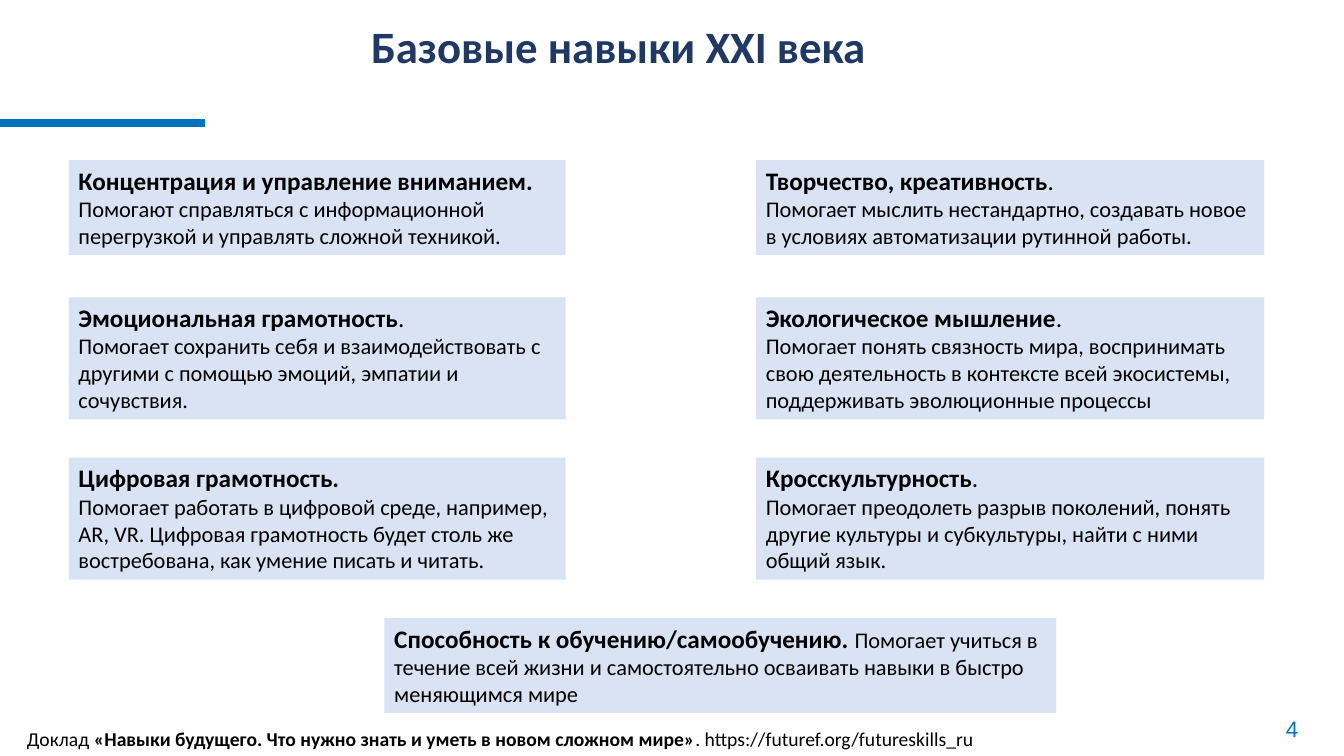
from dataclasses import dataclass

import pptx
import pptx.dml.color
import pptx.enum.shapes
import pptx.enum.text
import pptx.util
from lxml import etree

COLORS = {
    "accent": "0072BC",
    "title": "203864",
    "card": "DAE3F3",
    "text": "000000",
}
FONT = "Calibri"
Align = pptx.enum.text.PP_ALIGN
Anchor = pptx.enum.text.MSO_ANCHOR
AutoSize = pptx.enum.text.MSO_AUTO_SIZE
Pt = pptx.util.Pt


@dataclass(frozen=True)
class Box:
    left: float
    top: float
    width: float
    height: float

    def lengths(self) -> tuple:
        return Pt(self.left), Pt(self.top), Pt(self.width), Pt(self.height)


@dataclass(frozen=True)
class Run:
    text: str
    size: float
    bold: bool = False


@dataclass(frozen=True)
class Skill:
    heading: str
    benefit: str
    stop: str = ""


def rgb(name: str) -> pptx.dml.color.RGBColor:
    return pptx.dml.color.RGBColor.from_string(COLORS[name])


def write(paragraph, runs: list[Run], color: str = "text", font: str = FONT,
          align: Align = Align.LEFT) -> None:
    paragraph.alignment = align
    paragraph.font.name = font
    paragraph.font.color.rgb = rgb(color)
    if len({run.size for run in runs}) == 1:
        paragraph.font.size = Pt(runs[0].size)
    if len({run.bold for run in runs}) == 1:
        paragraph.font.bold = runs[0].bold
    for run in runs:
        part = paragraph.add_run()
        part.text = run.text
        if paragraph.font.size is None:
            part.font.size = Pt(run.size)
        if paragraph.font.bold is None:
            part.font.bold = run.bold


def add_card(slide, box: Box, paragraphs: list[list[Run]]) -> None:
    card = slide.shapes.add_shape(
        pptx.enum.shapes.MSO_SHAPE.RECTANGLE, *box.lengths())
    card.shadow.inherit = False
    card.fill.solid()
    card.fill.fore_color.rgb = rgb("card")
    card.line.fill.background()
    frame = card.text_frame
    frame.word_wrap = True
    frame.auto_size = AutoSize.SHAPE_TO_FIT_TEXT
    frame.vertical_anchor = Anchor.TOP
    for index, runs in enumerate(paragraphs):
        write(frame.add_paragraph() if index else frame.paragraphs[0], runs)


def add_title(slide) -> None:
    title = slide.shapes.title
    title.left, title.top, title.width, title.height = Box(257.8, 10, 371.5, 46).lengths()
    frame = title.text_frame
    frame.word_wrap = False
    frame.auto_size = AutoSize.SHAPE_TO_FIT_TEXT
    frame.vertical_anchor = Anchor.TOP
    write(frame.paragraphs[0], [Run("Базовые навыки XXI века", 32, True)], "title")


def add_accent_line(slide) -> None:
    accent = slide.shapes.add_connector(
        pptx.enum.shapes.MSO_CONNECTOR.STRAIGHT, Pt(0), Pt(87.8), Pt(146.2), Pt(87.8))
    accent.line.color.rgb = rgb("accent")
    accent.line.width = Pt(6)
    properties = accent.element.spPr
    etree.SubElement(properties, pptx.oxml.ns.qn("a:effectLst"))


def add_page_number(slide) -> None:
    frame = slide.shapes.add_textbox(*Box(894.2, 505.4, 57.6, 29.5).lengths()).text_frame
    frame.word_wrap = True
    frame.vertical_anchor = Anchor.MIDDLE
    write(frame.paragraphs[0], [Run("4", 16)], "accent", "Arial", Align.CENTER)


def add_reference(slide) -> None:
    frame = slide.shapes.add_textbox(*Box(12.2, 515.5, 694.8, 24.5).lengths()).text_frame
    frame.word_wrap = False
    frame.auto_size = AutoSize.SHAPE_TO_FIT_TEXT
    write(frame.paragraphs[0], [
        Run("Доклад ", 14),
        Run("«Навыки будущего. Что нужно знать и уметь в новом сложном мире»", 14, True),
        Run(". https://futuref.org/futureskills_ru", 14),
    ])


COLUMNS = [(49, 355), (540, 363)]
ROWS = [(114.5, 67.8), (212.4, 87.2), (326.9, 87.2)]
SKILLS = [
    [
        Skill("Концентрация и управление вниманием.",
              "Помогают справляться с информационной перегрузкой и управлять "
              "сложной техникой."),
        Skill("Эмоциональная грамотность",
              "Помогает сохранить себя и взаимодействовать с другими с помощью "
              "эмоций, эмпатии и сочувствия.", "."),
        Skill("Цифровая грамотность.",
              "Помогает работать в цифровой среде, например, AR, VR. Цифровая "
              "грамотность будет столь же востребована, как умение писать и читать."),
    ],
    [
        Skill("Творчество, креативность",
              "Помогает мыслить нестандартно, создавать новое в условиях "
              "автоматизации рутинной работы.", "."),
        Skill("Экологическое мышление",
              "Помогает понять связность мира, воспринимать свою деятельность в "
              "контексте всей экосистемы, поддерживать эволюционные процессы", "."),
        Skill("Кросскультурность",
              "Помогает преодолеть разрыв поколений, понять другие культуры и "
              "субкультуры, найти с ними общий язык.", "."),
    ],
]


def main() -> None:
    deck = pptx.Presentation()
    deck.slide_width, deck.slide_height = Pt(960), Pt(540)
    slide = deck.slides.add_slide(deck.slide_layouts.get_by_name("Title Only"))

    add_page_number(slide)
    add_accent_line(slide)
    add_title(slide)
    for (left, width), skills in zip(COLUMNS, SKILLS):
        for (top, height), skill in zip(ROWS, skills):
            heading = [Run(skill.heading, 18, True)]
            if skill.stop:
                heading.append(Run(skill.stop, 18))
            add_card(slide, Box(left, top, width, height),
                     [heading, [Run(skill.benefit, 16)]])
    add_card(slide, Box(274.5, 441.4, 480, 67.8), [[
        Run("Способность к обучению/самообучению. ", 18, True),
        Run("Помогает учиться в течение всей жизни и самостоятельно осваивать "
            "навыки в быстро меняющимся мире", 16),
    ]])
    add_reference(slide)
    deck.save("out.pptx")


if __name__ == "__main__":
    main()
